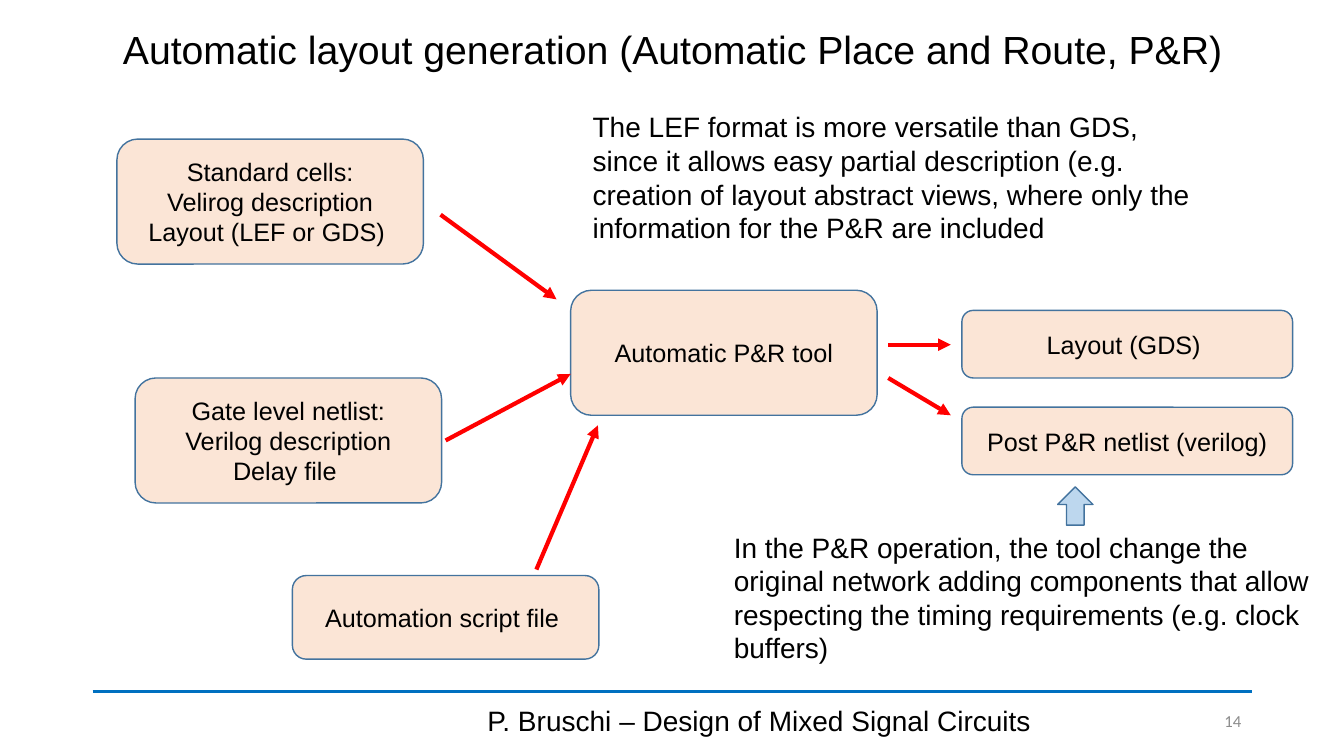
"""Build the slide on automatic layout generation with place and route."""
from lxml.etree import SubElement
from pptx import Presentation
from pptx.dml.color import RGBColor
from pptx.enum.shapes import MSO_CONNECTOR as Connector, MSO_SHAPE as Shape
from pptx.enum.text import MSO_ANCHOR as Anchor, PP_ALIGN as Align
from pptx.oxml.ns import qn
from pptx.util import Inches, Pt

COLORS = {
    "text": "000000", "number": "8C8C8C", "box": "FBE5D6", "outline": "43739E",
    "pointer": "BDD7EE", "arrow": "FF0000", "rule": "0070C0",
}


def write_text(shape, lines, size, align, anchor, color="text", font="Arial", spacing=1.0):
    """Fill a shape with one paragraph per line."""
    frame = shape.text_frame
    frame.word_wrap = True
    frame.vertical_anchor = anchor
    frame.text = "\n".join(lines)
    font_format = {"size": Pt(size), "name": font}
    for paragraph in frame.paragraphs:
        paragraph.alignment = align
        paragraph.line_spacing = spacing
        for name, value in font_format.items():
            setattr(paragraph.font, name, value)
        paragraph.font.color.rgb = RGBColor.from_string(COLORS[color])


def add_line(start, end, color, width):
    """Draw a straight connector without a shadow."""
    line = slide.shapes.add_connector(
        Connector.STRAIGHT, *[Inches(value) for value in (*start, *end)])
    line.line.color.rgb = RGBColor.from_string(COLORS[color])
    line.line.width = Pt(width)
    SubElement(line.element.spPr, qn("a:effectLst"))
    return line


presentation = Presentation()
presentation.slide_width = Inches(13.33)
presentation.slide_height = Inches(7.5)
slide = presentation.slides.add_slide(presentation.slide_layouts[6])

add_line((0.92, 6.86), (12.42, 6.86), "rule", 2.75)

texts = [
    ((0.92, 0.15, 11.5, 0.72),
     "Automatic layout generation (Automatic Place and Route, P&R)",
     {"size": 28, "align": Align.CENTER, "anchor": Anchor.MIDDLE, "spacing": 0.9}),
    ((4.42, 6.95, 6.22, 0.4), "P. Bruschi – Design of Mixed Signal Circuits",
     {"size": 20, "align": Align.CENTER, "anchor": Anchor.MIDDLE}),
    ((11.45, 6.95, 0.96, 0.4), "14",
     {"size": 12, "align": Align.RIGHT, "anchor": Anchor.MIDDLE,
      "color": "number", "font": "Calibri"}),
    ((5.78, 1.04, 6.16, 1.45),
     "The LEF format is more versatile than GDS, since it allows easy partial "
     "description (e.g. creation of layout abstract views, where only the "
     "information for the P&R are included",
     {"size": 20, "align": Align.LEFT, "anchor": Anchor.TOP}),
    ((7.18, 5.21, 6.16, 1.45),
     "In the P&R operation, the tool change the original network adding components "
     "that allow respecting the timing requirements (e.g. clock buffers)",
     {"size": 20, "align": Align.LEFT, "anchor": Anchor.TOP}),
]
for position, text, text_format in texts:
    text_box = slide.shapes.add_textbox(*[Inches(value) for value in position])
    write_text(text_box, [text], **text_format)

shapes = [
    (Shape.ROUNDED_RECTANGLE, (1.16, 1.38, 3.04, 1.24), "box",
     ["Standard cells:", "Velirog description", "Layout (LEF or GDS) "]),
    (Shape.ROUNDED_RECTANGLE, (1.34, 3.75, 3.04, 1.24), "box",
     ["Gate level netlist:", "Verilog description", "Delay file "]),
    (Shape.ROUNDED_RECTANGLE, (5.66, 2.88, 3.04, 1.24), "box", ["Automatic P&R tool"]),
    (Shape.ROUNDED_RECTANGLE, (2.9, 5.71, 3.04, 0.83), "box", ["Automation script file "]),
    (Shape.ROUNDED_RECTANGLE, (9.54, 3.08, 3.28, 0.67), "box", ["Layout (GDS) "]),
    (Shape.ROUNDED_RECTANGLE, (9.54, 4.04, 3.28, 0.67), "box", ["Post P&R netlist (verilog)"]),
    (Shape.UP_ARROW, (10.49, 4.83, 0.35, 0.38), "pointer", []),
]
for kind, position, fill, lines in shapes:
    shape = slide.shapes.add_shape(kind, *[Inches(value) for value in position])
    shape.shadow.inherit = False
    shape.fill.solid()
    shape.fill.fore_color.rgb = RGBColor.from_string(COLORS[fill])
    shape.line.color.rgb = RGBColor.from_string(COLORS["outline"])
    shape.line.width = Pt(1)
    if lines:
        write_text(shape, lines, 18, Align.CENTER, Anchor.MIDDLE)

arrows = [
    ((4.37, 2.13), (5.52, 2.97)),
    ((4.42, 4.37), (5.66, 3.71)),
    ((5.32, 5.65), (5.93, 4.22)),
    ((8.81, 3.42), (9.43, 3.42)),
    ((8.81, 3.75), (9.43, 4.12)),
]
for start, end in arrows:
    arrow = add_line(start, end, "arrow", 3)
    SubElement(arrow.line._get_or_add_ln(), qn("a:tailEnd"), type="triangle")

presentation.save("out.pptx")
